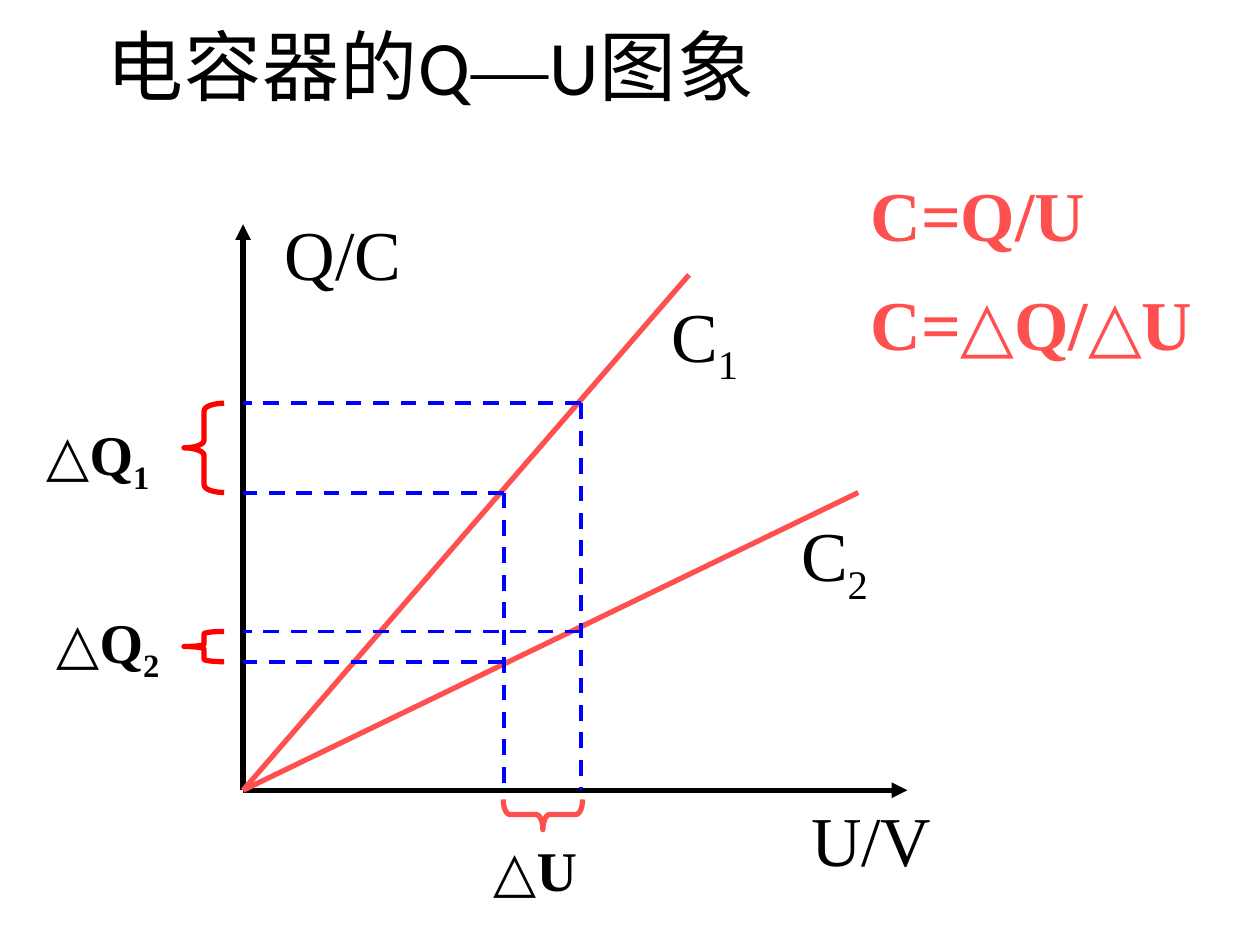
"""Build the slide on the Q–U graph of a capacitor."""
from lxml.etree import SubElement
from pptx import Presentation
from pptx.dml.color import RGBColor
from pptx.enum.dml import MSO_LINE
from pptx.enum.shapes import MSO_CONNECTOR, MSO_SHAPE
from pptx.enum.text import MSO_ANCHOR
from pptx.oxml.ns import qn
from pptx.util import Cm, Pt

BLACK, CORAL, RED, BLUE = "000000", "FF5050", "FF0000", "0000FF"


def paint(color_format, color):
    color_format.rgb = RGBColor.from_string(color)


def draw_line(start, end, color, width=3, dashed=False, arrow=False):
    line = slide.shapes.add_connector(
        MSO_CONNECTOR.STRAIGHT, *[Cm(value) for value in start + end])
    paint(line.line.color, color)
    line.line.width = Pt(width)
    if dashed:
        line.line.dash_style = MSO_LINE.DASH
    if arrow:
        SubElement(line.line._get_or_add_ln(), qn("a:tailEnd"), type="triangle")
    SubElement(line._element.spPr, qn("a:effectLst"))


presentation = Presentation()
presentation.slide_width, presentation.slide_height = Cm(25.4), Cm(19.05)
slide = presentation.slides.add_slide(presentation.slide_layouts[6])

title = slide.shapes.add_textbox(Cm(1.9), Cm(-0.28), Cm(21.6), Cm(3.18)).text_frame
title.word_wrap = True
title.vertical_anchor = MSO_ANCHOR.MIDDLE
heading = title.paragraphs[0]
heading.font.size = Pt(44)
paint(heading.font.color, BLACK)
for words, typeface in [("电容器的Q", "Calibri"), ("—", "Times New Roman"), ("U图象", "Calibri")]:
    run = heading.add_run()
    run.text = words
    run.font.name = typeface
    run._r.get_or_add_rPr().set("spc", "50")

origin_u, origin_q = origin = (4.9, 15.93)
for axis_end in [(18.29, origin_q), (origin_u, 4.52)]:
    draw_line(origin, axis_end, BLACK, arrow=True)
for graph_end in [(13.89, 5.54), (17.3, 9.93)]:
    draw_line(origin, graph_end, CORAL)

low_u, high_u = 10.16, 11.71
low_q1, high_q1 = 9.93, 8.13
low_q2, high_q2 = 13.34, 12.73
for voltage, top_charge in [(low_u, low_q1), (high_u, high_q1)]:
    draw_line((voltage, top_charge), (voltage, origin_q), BLUE, 2.25, dashed=True)
for voltage, charge in [(low_u, low_q1), (low_u, low_q2), (high_u, high_q1), (high_u, high_q2)]:
    draw_line((voltage, charge), (origin_u, charge), BLUE, 2.25, dashed=True)

braces = [
    (10.64, 15.62, 0.61, 1.6, 270, 0.22, CORAL),
    (3.71, high_q1, 0.81, low_q1 - high_q1, 0, 0.19, RED),
    (3.71, high_q2, 0.81, low_q2 - high_q2, 0, 0.08, RED),
]
for left, top, width, height, rotation, curl, color in braces:
    brace = slide.shapes.add_shape(
        MSO_SHAPE.LEFT_BRACE, Cm(left), Cm(top), Cm(width), Cm(height))
    brace.rotation = rotation
    brace.adjustments[0] = curl
    brace.shadow.inherit = False
    brace.fill.background()
    paint(brace.line.color, color)
    brace.line.width = Pt(3)

labels = [
    ("U/V", "", 16.1, 15.93, 4.4, 40, False, BLACK),
    ("Q/C", "", 5.49, 4.11, 4.4, 40, False, BLACK),
    ("C", "1", 13.28, 5.77, 2.4, 40, False, BLACK),
    ("C", "2", 15.9, 10.19, 3, 40, False, BLACK),
    ("△U", "", 9.7, 16.71, 2.6, 32, True, BLACK),
    ("△Q", "1", 0.69, 8.33, 3.8, 32, True, BLACK),
    ("△Q", "2", 0.89, 12.12, 3.8, 32, True, BLACK),
    ("C=Q/U", "", 17.3, 3.33, 6.1, 40, True, CORAL),
    ("C=△Q/△U", "", 17.3, 5.54, 8.7, 40, True, CORAL),
]
for symbol, subscript, left, top, width, size, bold, color in labels:
    label = slide.shapes.add_textbox(
        Cm(left), Cm(top), Cm(width), Cm(size * 0.049)).text_frame
    label.word_wrap = True
    line = label.paragraphs[0]
    line.space_before = Pt(size * 0.1)
    line.font.name = "Times New Roman"
    line.font.size = Pt(size)
    line.font.bold = bold
    paint(line.font.color, color)
    line.add_run().text = symbol
    if subscript:
        index = line.add_run()
        index.text = subscript
        index._r.get_or_add_rPr().set("baseline", "-25000")

presentation.save("out.pptx")
